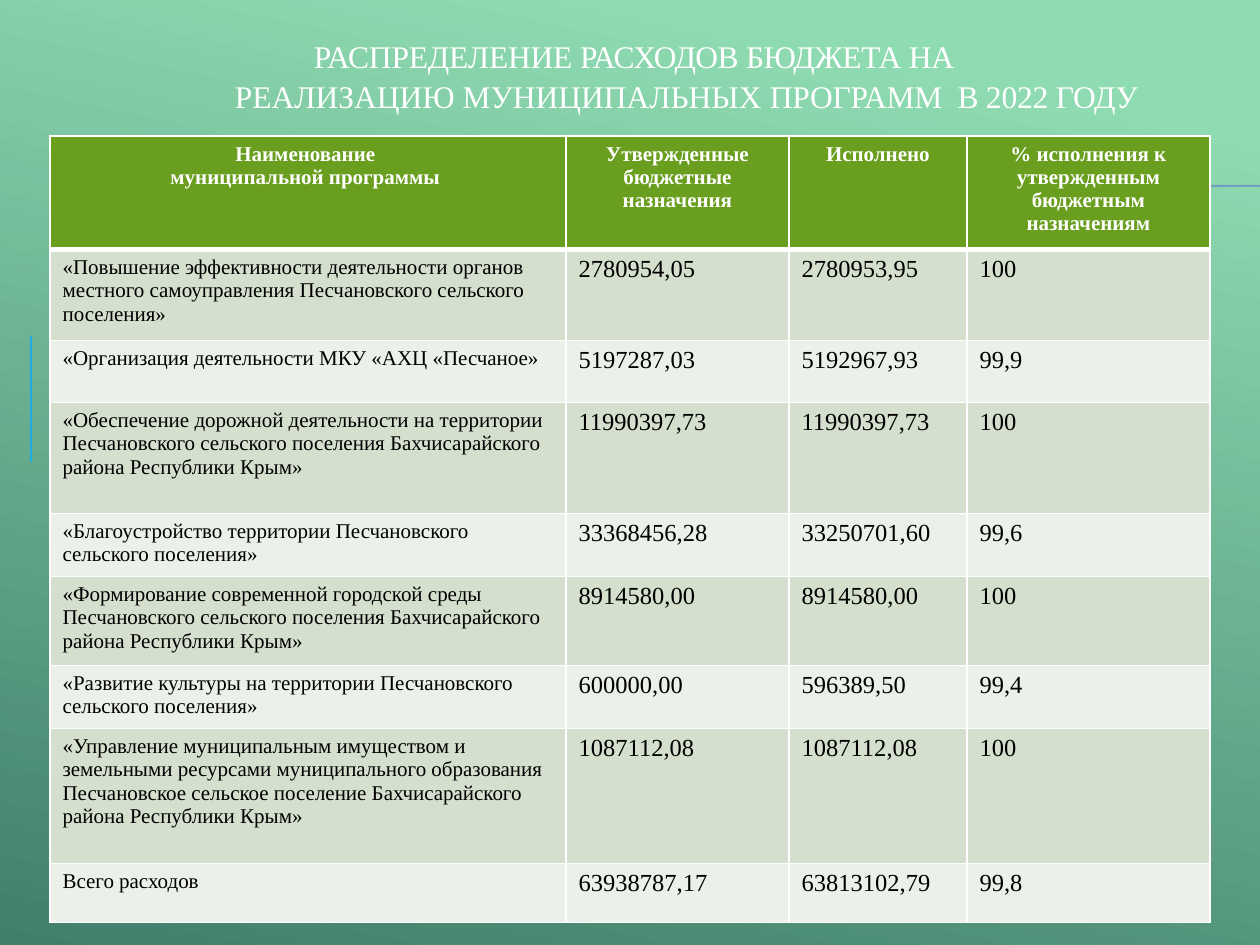
from pptx import Presentation
from pptx.dml.color import RGBColor
from pptx.enum.shapes import MSO_CONNECTOR as CONNECTOR, MSO_SHAPE as SHAPE
from pptx.enum.text import MSO_ANCHOR as ANCHOR, PP_ALIGN as ALIGN
from pptx.oxml.ns import qn
from pptx.util import Pt
from lxml.etree import SubElement

PX = 914400 // 126  # EMU in one px

THEME = {
    "font": "Times New Roman",
    "title_pt": 18, "text_pt": 12, "amount_pt": 14,
    "white": "FFFFFF", "black": "000000",
    "sky": "6ED2EB", "deep": "06588E", "tint": "FFFF00",
    "accent": "1CADE3", "rule": "6FA0BF",
    "header": "6A9E1F", "bands": ("D4DFCD", "EBF0E8"),
}


def add_run(paragraph, text, size, color, bold=False):
    run = paragraph.add_run()
    run.text = text
    run.font.name = THEME["font"]
    run.font.size = Pt(THEME[size])
    run.font.bold = bold
    run.font.color.rgb = RGBColor.from_string(THEME[color])
    return run


def add_border(cell, side, width):
    line = SubElement(cell._tc.get_or_add_tcPr(), qn(f"a:ln{side}"), w=str(Pt(width)))
    SubElement(SubElement(line, qn("a:solidFill")), qn("a:srgbClr"), val=THEME["white"])


prs = Presentation()
prs.slide_width, prs.slide_height = 1260 * PX, 945 * PX
slide = prs.slides.add_slide(prs.slide_layouts[6])
shapes = slide.shapes

# Background gradient
backdrop = slide.background.fill
backdrop.gradient()
backdrop.gradient_angle = 258
for stop, position, color in zip(backdrop.gradient_stops, (0.1, 1), ("sky", "deep")):
    stop.position = position
    stop.color.rgb = RGBColor.from_string(THEME[color])

# Yellow tint over the whole slide, and the thin rule on the right
for box, color in (((0, 0, 1260, 945), "tint"), ((598, 185, 662, 2), "rule")):
    panel = shapes.add_shape(SHAPE.RECTANGLE, *(n * PX for n in box))
    panel.shadow.inherit = False
    panel.line.fill.background()
    panel.fill.solid()
    panel.fill.fore_color.rgb = RGBColor.from_string(THEME[color])
    if color == "tint":
        tint_color = panel._element.spPr.find(qn("a:solidFill"))[0]
        SubElement(tint_color, qn("a:alpha"), val="24000")

# Accent line on the left
accent = shapes.add_connector(CONNECTOR.STRAIGHT, 31 * PX, 336 * PX, 31 * PX, 462 * PX)
accent.line.width = Pt(1.56)
accent.line.color.rgb = RGBColor.from_string(THEME["accent"])
SubElement(accent._element.spPr, qn("a:effectLst"))

# Title: the first line is indented further than the second
title = shapes.add_textbox(11 * PX, 35 * PX, 1176 * PX, 78 * PX).text_frame
title.word_wrap = True
title.vertical_anchor = ANCHOR.MIDDLE
title.margin_left = title.margin_right = title.margin_bottom = 0
title.margin_top = PX
heading = title.paragraphs[0]
heading.space_before = Pt(1)
heading.line_spacing = 1.06
indents = heading._p.get_or_add_pPr()
indents.set("marL", str(224 * PX))
indents.set("indent", str(79 * PX))
TITLE_RUNS = [  # text, letter spacing in hundredths of a point
    ("РАСПРЕДЕЛЕНИЕ ", -10), ("РАСХОДОВ ", -30), ("БЮДЖЕТА ", -20), ("НА", -10),
    ("РЕАЛИЗАЦИЮ МУНИЦИПАЛЬНЫХ ", 0), ("ПРОГРАММ  В 2022 ГОДУ", -10),
]
for text, spacing in TITLE_RUNS:
    run = add_run(heading, text, "title_pt", "white")
    run._r.get_or_add_rPr().set("spc", str(spacing))
    if text == "НА":
        heading.add_line_break()

# Budget table
HEADER = [
    "Наименование \nмуниципальной программы ",
    "Утвержденные бюджетные назначения",
    "Исполнено",
    "% исполнения к утвержденным бюджетным назначениям",
]
PROGRAMS = [
    ("«Повышение эффективности деятельности органов местного самоуправления "
     "Песчановского сельского поселения»", "2780954,05", "2780953,95", "100"),
    ("«Организация деятельности МКУ «АХЦ «Песчаное»", "5197287,03", "5192967,93", "99,9"),
    ("«Обеспечение дорожной деятельности на территории Песчановского сельского "
     "поселения Бахчисарайского района Республики Крым»",
     "11990397,73", "11990397,73", "100"),
    ("«Благоустройство территории Песчановского сельского поселения»",
     "33368456,28", "33250701,60", "99,6"),
    ("«Формирование современной городской среды Песчановского сельского "
     "поселения Бахчисарайского района Республики Крым»",
     "8914580,00", "8914580,00", "100"),
    ("«Развитие культуры на территории Песчановского сельского поселения»",
     "600000,00", "596389,50", "99,4"),
    ("«Управление муниципальным имуществом и земельными ресурсами муниципального "
     "образования Песчановское сельское поселение Бахчисарайского района "
     "Республики Крым»", "1087112,08", "1087112,08", "100"),
    ("Всего расходов", "63938787,17", "63813102,79", "99,8"),
]
COLUMN_WIDTHS = [516, 223, 178, 243]
ROW_HEIGHTS = [112, 91, 62, 111, 62, 89, 63, 135, 59]

budget = shapes.add_table(
    len(ROW_HEIGHTS), len(COLUMN_WIDTHS), 50 * PX, 136 * PX,
    sum(COLUMN_WIDTHS) * PX, sum(ROW_HEIGHTS) * PX).table
for column, width in zip(budget.columns, COLUMN_WIDTHS):
    column.width = width * PX
for row, height in zip(budget.rows, ROW_HEIGHTS):
    row.height = height * PX

for r, values in enumerate([HEADER, *PROGRAMS]):
    for c, value in enumerate(values):
        cell = budget.cell(r, c)
        for side in "LRTB":
            under_header = (r, side) in ((0, "B"), (1, "T"))
            add_border(cell, side, 3 if under_header else 1)
        fill = THEME["bands"][(r - 1) % 2] if r else THEME["header"]
        cell.fill.solid()
        cell.fill.fore_color.rgb = RGBColor.from_string(fill)
        for i, text in enumerate(value.split("\n")):
            frame = cell.text_frame
            paragraph = frame.add_paragraph() if i else frame.paragraphs[0]
            if r == 0:
                paragraph.alignment = ALIGN.CENTER
                add_run(paragraph, text, "text_pt", "white", bold=True)
            else:
                add_run(paragraph, text, "amount_pt" if c else "text_pt", "black")

prs.save("out.pptx")
